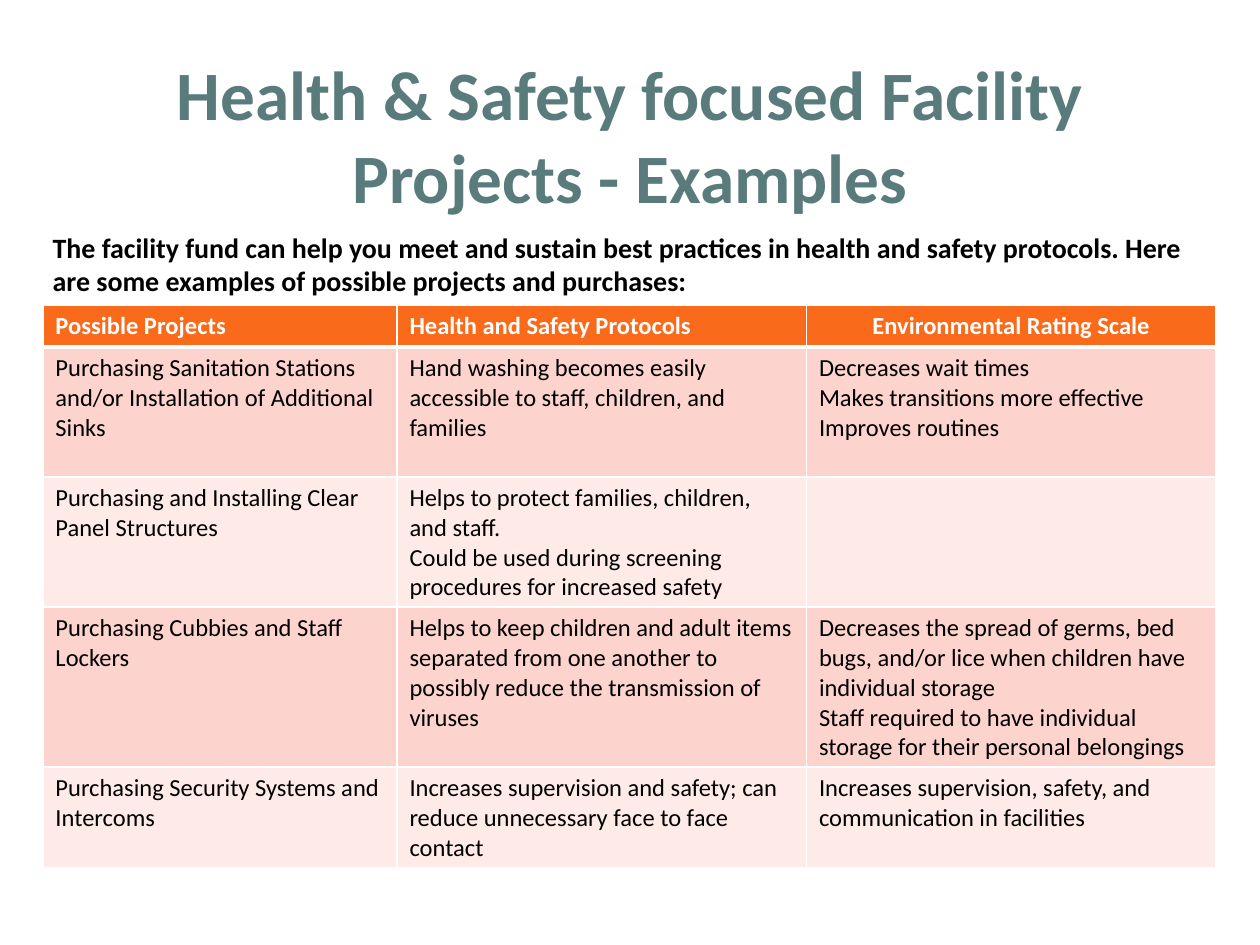
from lxml import etree
from pptx import Presentation
from pptx import util as u
from pptx.dml.color import RGBColor
from pptx.enum import text
from pptx.oxml import ns

FONT = "Calibri"
COLOURS = {
    "title": "597B7C",
    "ink": "000000",
    "white": "FFFFFF",
    "header": "F96A1B",
    "dark_band": "FDD4CD",
    "light_band": "FEEBE8",
}

TITLE = "Health & Safety focused Facility Projects - Examples"
LEAD = (
    "The facility fund can help you meet and sustain best practices in health "
    "and safety protocols. Here are some examples of possible projects and purchases:"
)
COLUMN_WIDTHS = [2.81, 3.25, 3.25]
ROW_HEIGHTS = [0.33, 1.03, 1.03, 1.27, 0.79]
# Each cell is a list of paragraphs.
ROWS = [
    [["Possible Projects"], ["Health and Safety Protocols"], ["Environmental Rating Scale"]],
    [
        ["Purchasing Sanitation Stations and/or Installation of Additional Sinks"],
        ["Hand washing becomes easily accessible to staff, children, and families"],
        ["Decreases wait times", "Makes transitions more effective", "Improves routines"],
    ],
    [
        ["Purchasing and Installing Clear Panel Structures"],
        [
            "Helps to protect families, children, and staff.",
            "Could be used during screening procedures for increased safety",
        ],
        [],
    ],
    [
        ["Purchasing Cubbies and Staff Lockers"],
        [
            "Helps to keep children and adult items separated from one another to "
            "possibly reduce the transmission of viruses"
        ],
        [
            "Decreases the spread of germs, bed bugs, and/or lice when children have "
            "individual storage",
            "Staff required to have individual storage for their personal belongings",
        ],
    ],
    [
        ["Purchasing Security Systems and Intercoms"],
        ["Increases supervision and safety; can reduce unnecessary face to face contact"],
        ["Increases supervision, safety, and communication in facilities"],
    ],
]


def write(frame, paragraphs, size, colour, bold=False, align=text.PP_ALIGN.LEFT):
    for index, words in enumerate(paragraphs):
        para = frame.add_paragraph() if index else frame.paragraphs[0]
        para.alignment = align
        span = para.add_run()
        span.text = words
        span.font.name = FONT
        span.font.size = u.Pt(size)
        span.font.bold = bold
        span.font.color.rgb = RGBColor.from_string(COLOURS[colour])


def add_title(page):
    title = page.shapes.title
    title.left, title.top = u.Inches(0.5), u.Inches(0.44)
    title.width, title.height = u.Inches(9), u.Inches(1.25)
    frame = title.text_frame
    frame.auto_size = text.MSO_AUTO_SIZE.NONE
    frame.vertical_anchor = text.MSO_ANCHOR.MIDDLE
    write(frame, [TITLE], 39.6, "title", True, text.PP_ALIGN.CENTER)


def add_lead(page):
    box = page.shapes.add_textbox(
        u.Inches(0.32), u.Inches(1.78), u.Inches(9.5), u.Inches(0.64)
    )
    box.text_frame.word_wrap = True
    box.text_frame.auto_size = text.MSO_AUTO_SIZE.SHAPE_TO_FIT_TEXT
    write(box.text_frame, [LEAD], 16, "ink", True)


def set_borders(cell, bottom_width):
    """Draw white cell edges; they must precede the cell's fill in the XML."""
    properties = cell._tc.get_or_add_tcPr()
    for edge, width in (("lnL", 1), ("lnR", 1), ("lnT", 1), ("lnB", bottom_width)):
        line = etree.SubElement(properties, ns.qn(f"a:{edge}"), w=str(u.Pt(width)))
        fill = etree.SubElement(line, ns.qn("a:solidFill"))
        etree.SubElement(fill, ns.qn("a:srgbClr"), val=COLOURS["white"])


def add_projects_table(page):
    table = page.shapes.add_table(
        len(ROWS), len(COLUMN_WIDTHS), u.Inches(0.34), u.Inches(2.42),
        u.Inches(sum(COLUMN_WIDTHS)), u.Inches(sum(ROW_HEIGHTS)),
    ).table
    for column, width in zip(table.columns, COLUMN_WIDTHS):
        column.width = u.Inches(width)
    for row, height in zip(table.rows, ROW_HEIGHTS):
        row.height = u.Inches(height)

    for row_index, row in enumerate(ROWS):
        is_header = row_index == 0
        band = "header" if is_header else "dark_band" if row_index % 2 else "light_band"
        for column_index, paragraphs in enumerate(row):
            cell = table.cell(row_index, column_index)
            # The header rule is shared with the top edge of the first body row.
            set_borders(cell, 3 if is_header else 1)
            cell.fill.solid()
            cell.fill.fore_color.rgb = RGBColor.from_string(COLOURS[band])
            centred = is_header and column_index == len(row) - 1
            align = text.PP_ALIGN.CENTER if centred else text.PP_ALIGN.LEFT
            write(cell.text_frame, paragraphs, 14,
                  "white" if is_header else "ink", is_header, align)


def main():
    deck = Presentation()
    deck.slide_width, deck.slide_height = u.Inches(10), u.Inches(7.5)
    page = deck.slides.add_slide(deck.slide_layouts.get_by_name("Title Only"))
    add_title(page)
    add_lead(page)
    add_projects_table(page)
    deck.save("out.pptx")


if __name__ == "__main__":
    main()
